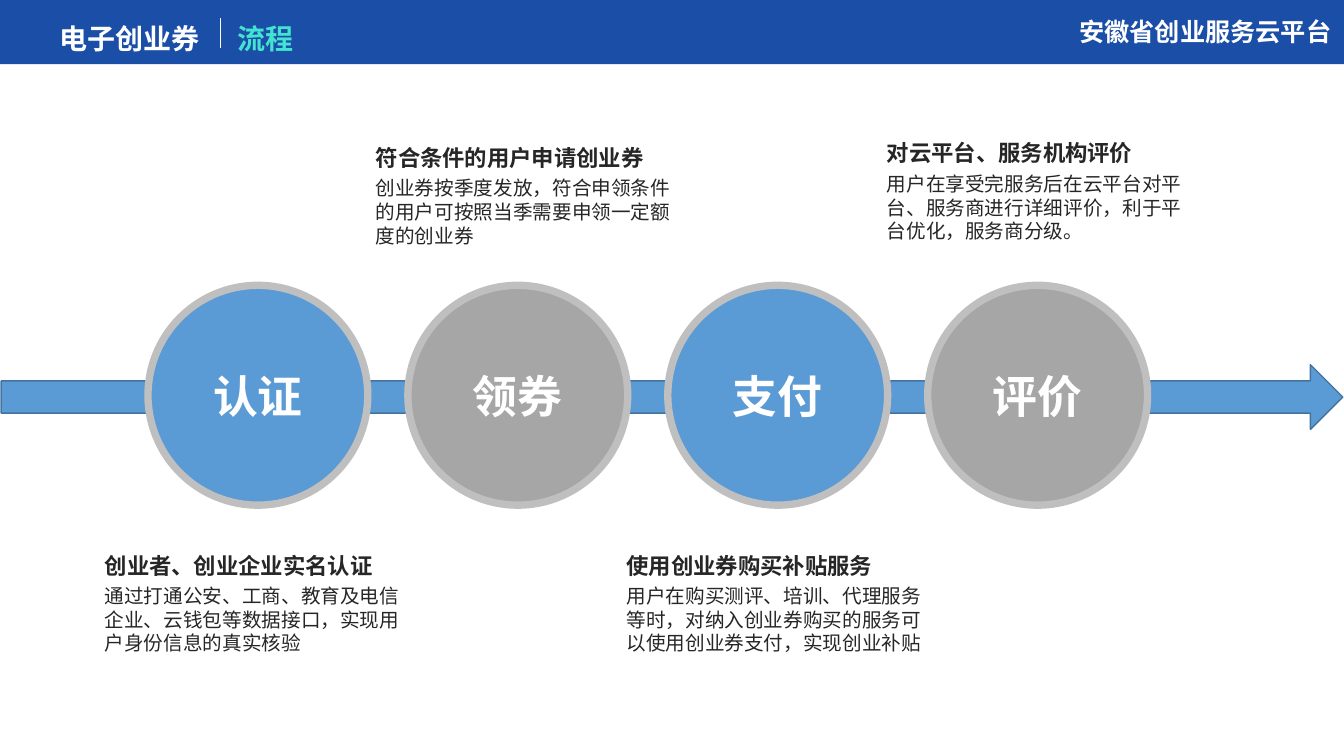
from lxml.etree import SubElement
from pptx import Presentation
from pptx.dml.color import RGBColor
from pptx.enum.shapes import MSO_CONNECTOR, MSO_SHAPE
from pptx.enum.text import MSO_ANCHOR, MSO_AUTO_SIZE, PP_ALIGN
from pptx.oxml.ns import qn
from pptx.util import Cm, Pt

FONT = "Noto Sans CJK SC"
COLORS = {
    "navy": "1A4EA7", "blue": "5B9BD5", "edge": "43739E", "gray": "A6A6A6",
    "ring": "BFBFBF", "ink": "262626", "white": "FFFFFF", "mint": "44E2D1",
}


def style_text(para, size, color, bold=False):
    for span in para.runs:
        span.font.size = Pt(size)
        span.font.bold = bold
        span.font.color.rgb = RGBColor.from_string(COLORS[color])
        span.font.name = FONT
        SubElement(span.font._element, qn("a:ea"), typeface=FONT)


def add_solid(kind, left, top, width, height, fill, line=None, weight=1):
    solid = page.shapes.add_shape(kind, Cm(left), Cm(top), Cm(width), Cm(height))
    solid.shadow.inherit = False
    solid.fill.solid()
    solid.fill.fore_color.rgb = RGBColor.from_string(COLORS[fill])
    if line:
        solid.line.color.rgb = RGBColor.from_string(COLORS[line])
        solid.line.width = Pt(weight)
    else:
        solid.line.fill.background()
    return solid


deck = Presentation()
deck.slide_width, deck.slide_height = Cm(33.87), Cm(19.05)
page = deck.slides.add_slide(deck.slide_layouts[5])

# Header bar, with the title lifted in front of it
bar = add_solid(MSO_SHAPE.RECTANGLE, -0.03, -0.03, 33.91, 1.65, "navy")
title = page.shapes.title
bar.element.addnext(title.element)
title.left, title.top, title.width, title.height = Cm(1.24), Cm(0.41), Cm(16.08), Cm(1.12)
frame = title.text_frame
frame.vertical_anchor = MSO_ANCHOR.TOP
frame.auto_size = MSO_AUTO_SIZE.NONE
para = frame.paragraphs[0]
para.alignment = PP_ALIGN.LEFT
tabs = SubElement(para._p.get_or_add_pPr(), qn("a:tabLst"))
SubElement(tabs, qn("a:tab"), pos=str(Cm(4.5)), algn="l")
for words in ("电子创业券\t", "流程"):
    para.add_run().text = words
style_text(para, 20, "white", bold=True)
para.runs[1].font.color.rgb = RGBColor.from_string(COLORS["mint"])

# Divider between the two parts of the title
divider = page.shapes.add_connector(MSO_CONNECTOR.STRAIGHT, Cm(5.56), Cm(0.46), Cm(5.56), Cm(1.22))
divider.line.color.rgb = RGBColor.from_string(COLORS["white"])
divider.line.width = Pt(0.5)
SubElement(divider._element.spPr, qn("a:effectLst"))

# Platform name
box = page.shapes.add_textbox(Cm(26.95), Cm(0.28), Cm(6.93), Cm(1.02))
box.text_frame.word_wrap = False
box.text_frame.text = "安徽省创业服务云平台"
style_text(box.text_frame.paragraphs[0], 18, "white", bold=True)

# Process arrow
add_solid(MSO_SHAPE.RIGHT_ARROW, 0.03, 9.19, 33.81, 1.63, "blue", "edge")

# Steps: circle label, caption left and top, heading, body
steps = [
    ("认证", 2.39, 13.51, "创业者、创业企业实名认证",
     "通过打通公安、工商、教育及电信企业、云钱包等数据接口，实现用户身份信息的真实核验"),
    ("领券", 9.22, 3.23, "符合条件的用户申请创业券",
     "创业券按季度发放，符合申领条件的用户可按照当季需要申领一定额度的创业券"),
    ("支付", 15.54, 13.51, "使用创业券购买补贴服务",
     "用户在购买测评、培训、代理服务等时，对纳入创业券购买的服务可以使用创业券支付，实现创业补贴"),
    ("评价", 22.1, 3.12, "对云平台、服务机构评价",
     "用户在享受完服务后在云平台对平台、服务商进行详细评价，利于平台优化，服务商分级。"),
]
for index, (label, left, top, heading, body) in enumerate(steps):
    circle = add_solid(MSO_SHAPE.OVAL, 3.73 + 6.55 * index, 7.19, 5.54, 5.54,
                       ("blue", "gray")[index % 2], "ring", 5.25)
    circle.text_frame.text = label
    circle.text_frame.vertical_anchor = MSO_ANCHOR.MIDDLE
    para = circle.text_frame.paragraphs[0]
    para.alignment = PP_ALIGN.CENTER
    style_text(para, 32, "white", bold=True)

    # Heading above its body text
    for words, drop, height, size, bold, spacing in (
        (heading, 0, 1.22, 16, True, 1.4),
        (body, 1.09, 2.92, 14, False, 1.0),
    ):
        box = page.shapes.add_textbox(Cm(left), Cm(top + drop), Cm(8.1), Cm(height))
        box.text_frame.word_wrap = True
        box.text_frame.text = words
        para = box.text_frame.paragraphs[0]
        para.line_spacing = spacing
        style_text(para, size, "ink", bold)

deck.save("out.pptx")
